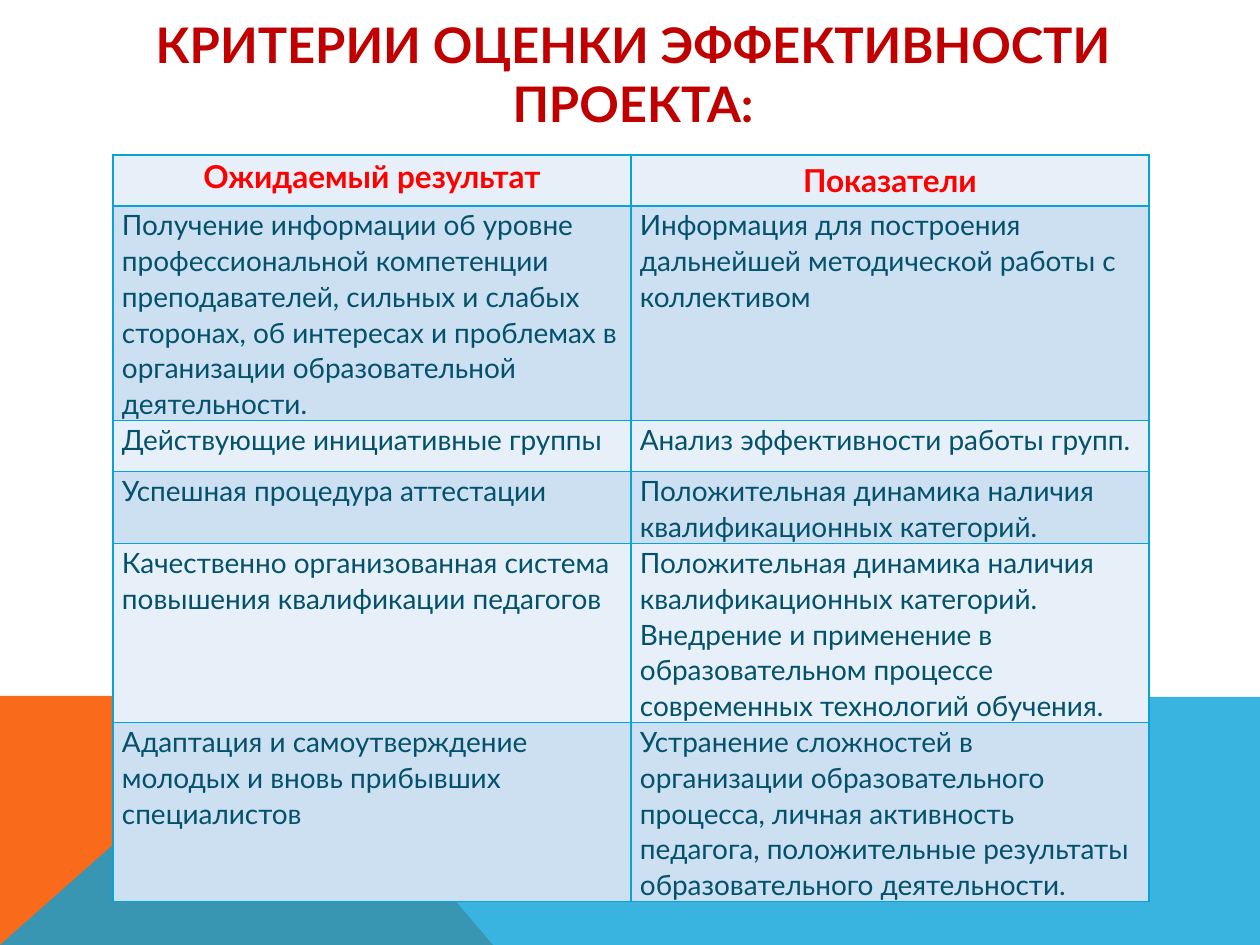
from dataclasses import dataclass

from lxml import etree
from pptx import Presentation
from pptx import util as u
from pptx.dml.color import RGBColor
from pptx.enum import text
from pptx.oxml.ns import qn

SCALE = 914400 / 126


@dataclass(frozen=True)
class Theme:
    font: str = "Lato"
    title: str = "C00000"
    head: str = "FF0000"
    body: str = "04516C"
    line: str = "08A1D9"
    orange: str = "F96A1B"
    bands: tuple[str, str] = ("E7F0F8", "CCE0F1")
    title_size: int = 28
    head_size: int = 18
    body_size: int = 16


@dataclass(frozen=True)
class Wedge:
    points: tuple[tuple[int, int], ...]
    color: str
    alpha: int = 100


@dataclass(frozen=True)
class Row:
    height: int
    result: str
    measure: str


THEME = Theme()
WEDGES = (
    Wedge(((0, 945), (0, 696), (281, 696), (493, 945)), THEME.orange),
    Wedge(((0, 945), (281, 696), (1260, 697), (1260, 945)), THEME.line, 80),
)
ROWS = (
    Row(51, "Ожидаемый результат", "Показатели"),
    Row(214, "Получение информации об уровне профессиональной компетенции "
        "преподавателей, сильных и слабых сторонах, об интересах и проблемах "
        "в организации образовательной деятельности.",
        "Информация для построения дальнейшей методической работы с коллективом"),
    Row(51, "Действующие инициативные группы",
        "Анализ эффективности работы групп."),
    Row(72, "Успешная процедура аттестации",
        "Положительная динамика наличия квалификационных категорий."),
    Row(179, "Качественно организованная система повышения квалификации педагогов",
        "Положительная динамика наличия квалификационных категорий. Внедрение "
        "и применение в образовательном процессе современных технологий обучения."),
    Row(178, "Адаптация и самоутверждение молодых и вновь прибывших специалистов",
        "Устранение сложностей в организации образовательного процесса, личная "
        "активность педагога, положительные результаты образовательного деятельности."),
)


def px(count: int) -> u.Emu:
    return u.Emu(round(count * SCALE))


def style(frame, size: int, color: str, bold: bool, center: bool) -> None:
    for para in frame.paragraphs:
        para.alignment = text.PP_ALIGN.CENTER if center else text.PP_ALIGN.LEFT
        for run in para.runs:
            font = run.font
            font.name, font.size, font.bold = THEME.font, u.Pt(size), bold
            font.color.rgb = RGBColor.from_string(color)


def draw_wedge(slide, wedge: Wedge) -> None:
    start, *rest = wedge.points
    path = slide.shapes.build_freeform(*start, scale=SCALE)
    path.add_line_segments(rest, close=True)
    shape = path.convert_to_shape()
    shape.shadow.inherit = False
    shape.line.fill.background()
    shape.fill.solid()
    shape.fill.fore_color.rgb = RGBColor.from_string(wedge.color)
    if wedge.alpha < 100:
        color = shape.fill._xPr.find(".//" + qn("a:srgbClr"))
        etree.SubElement(color, qn("a:alpha"), val=str(wedge.alpha * 1000))


def draw_title(slide, words: str) -> None:
    title = slide.shapes.title
    title.left, title.top, title.width, title.height = map(px, (115, 66, 1036, 76))
    frame = title.text_frame
    frame.text = words
    frame.word_wrap = True
    frame.auto_size = text.MSO_AUTO_SIZE.NONE
    frame.vertical_anchor = text.MSO_ANCHOR.BOTTOM
    frame.margin_bottom = px(10)
    style(frame, THEME.title_size, THEME.title, True, True)


def draw_edges(cell) -> None:
    props = cell._tc.get_or_add_tcPr()
    for side in ("lnL", "lnR", "lnT", "lnB"):
        edge = etree.SubElement(props, qn("a:" + side), w=str(u.Pt(1)))
        fill = etree.SubElement(edge, qn("a:solidFill"))
        etree.SubElement(fill, qn("a:srgbClr"), val=THEME.line)


def draw_cell(cell, words: str, head: bool, band: str, tight: bool) -> None:
    draw_edges(cell)
    cell.fill.solid()
    cell.fill.fore_color.rgb = RGBColor.from_string(band)
    frame = cell.text_frame
    frame.text = words
    if tight:
        cell.margin_left = cell.margin_right = px(9)
        cell.margin_top = cell.margin_bottom = 0
        frame.paragraphs[0].line_spacing = 1.07
    size = THEME.head_size if head else THEME.body_size
    style(frame, size, THEME.head if head else THEME.body, head, head)


def draw_table(slide, rows: tuple[Row, ...]) -> None:
    height = sum(row.height for row in rows)
    table = slide.shapes.add_table(
        len(rows), 2, px(113), px(155), px(1036), px(height)).table
    table.first_row = table.horz_banding = False
    for col in table.columns:
        col.width = px(518)
    for i, row in enumerate(rows):
        table.rows[i].height = px(row.height)
        for j, words in enumerate((row.result, row.measure)):
            head = i == 0
            draw_cell(table.cell(i, j), words, head, THEME.bands[i % 2],
                      not head or j == 0)


def main() -> None:
    deck = Presentation()
    deck.slide_width, deck.slide_height = px(1260), px(945)
    slide = deck.slides.add_slide(deck.slide_layouts[5])
    for wedge in WEDGES:
        draw_wedge(slide, wedge)
    draw_title(slide, "КРИТЕРИИ ОЦЕНКИ ЭФФЕКТИВНОСТИ ПРОЕКТА:")
    draw_table(slide, ROWS)
    deck.save("out.pptx")


if __name__ == "__main__":
    main()
